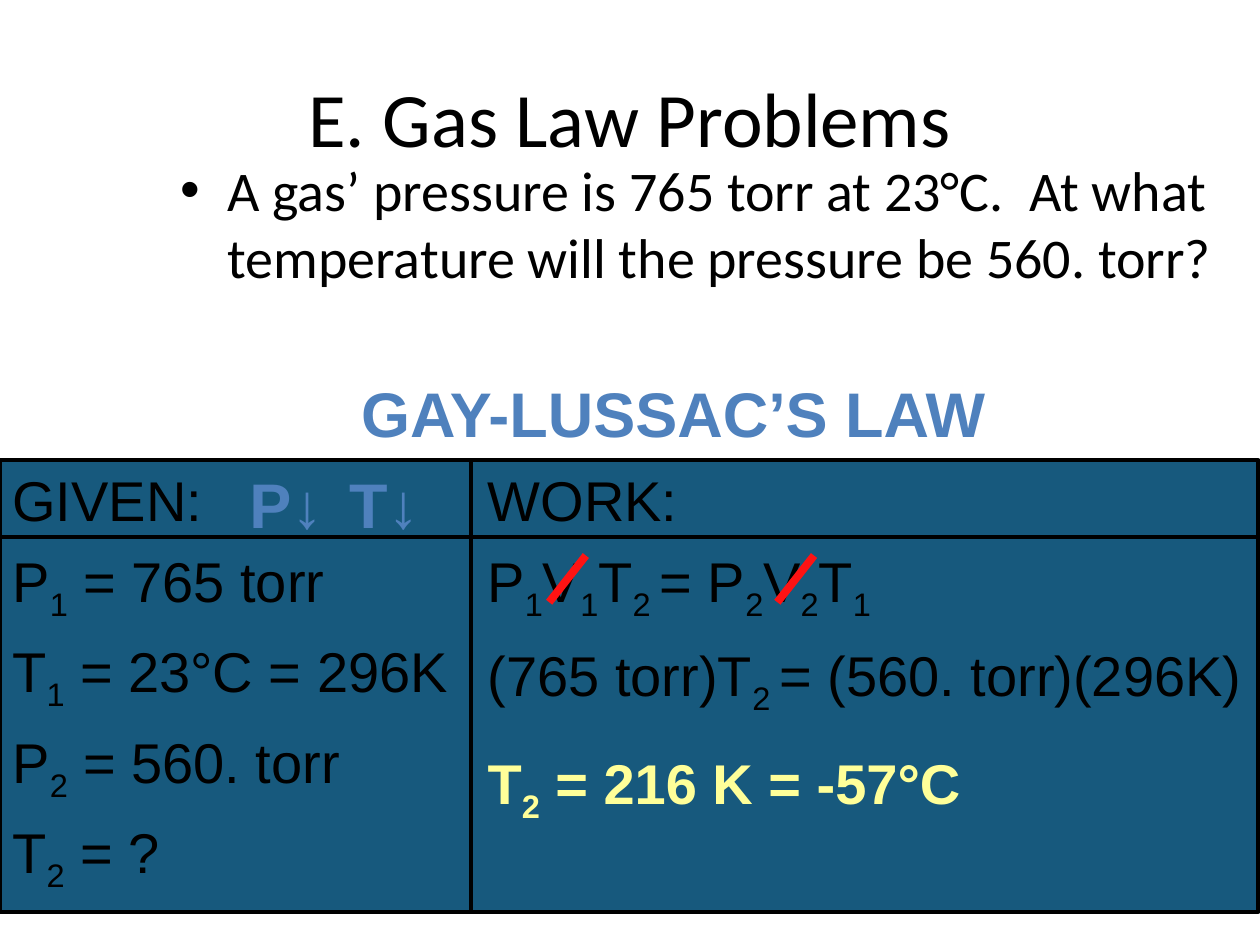
from lxml.etree import SubElement
from pptx import Presentation
from pptx.dml.color import RGBColor
from pptx.enum.shapes import MSO_CONNECTOR as Link, MSO_SHAPE as Shape
from pptx.enum.text import MSO_ANCHOR as Anchor, MSO_AUTO_SIZE as Fit, PP_ALIGN as Align
from pptx.oxml.ns import qn
from pptx.util import Cm, Pt

BLACK = RGBColor(0x00, 0x00, 0x00)
TEAL = RGBColor(0x17, 0x59, 0x7D)
BLUE = RGBColor(0x4F, 0x81, 0xBD)
RED = RGBColor(0xFF, 0x13, 0x13)
CREAM = RGBColor(0xFF, 0xFF, 0x99)


def style(para, face, size, color, bold=False):
    """Set the font of a whole paragraph."""
    font = para.font
    font.name, font.size, font.bold = face, Pt(size), bold
    font.color.rgb = color


def write(slide, box, rows, size=32, color=BLACK, bold=False, gap=8, align=Align.LEFT):
    """Add a text box; every second part between bars is a subscript."""
    frame = slide.shapes.add_textbox(*map(Cm, box)).text_frame
    frame.word_wrap = True
    for i, row in enumerate(rows):
        para = frame.add_paragraph() if i else frame.paragraphs[0]
        para.alignment = align
        para.space_before = Pt(gap if i else 2.5)
        style(para, "Arial", size, color, bold)
        for j, part in enumerate(row.split("|")):
            run = para.add_run()
            run.text = part
            if j % 2:
                run._r.get_or_add_rPr().set("baseline", "-25000")
    return frame


def rule(slide, start, end, color, width):
    """Draw a straight line without a shadow."""
    line = slide.shapes.add_connector(Link.STRAIGHT, *map(Cm, start + end))
    line.line.color.rgb = color
    line.line.width = Pt(width)
    SubElement(line.element.spPr, qn("a:effectLst"))


def fill(holder, box, text, size):
    """Place a placeholder and set its single paragraph."""
    holder.left, holder.top, holder.width, holder.height = map(Cm, box)
    frame = holder.text_frame
    frame.text = text
    frame.auto_size = Fit.NONE
    style(frame.paragraphs[0], "Calibri", size, BLACK)
    return frame


def header(slide, box):
    """Place the title, the question and the name of the law."""
    x, y, w, h = box
    title = fill(slide.shapes.title, (x, y, w, 3.18), "E. Gas Law Problems", 44)
    title.vertical_anchor = Anchor.MIDDLE
    ask = fill(
        slide.placeholders[1],
        (x + 2.11, y + 2.24, w - 1.27, 6.1),
        "A gas’ pressure is 765 torr at 23°C.  At what "
        "temperature will the pressure be 560. torr?",
        32,
    )
    ask.paragraphs[0].space_before = Pt(1)
    write(slide, (x + 5.18, y + h - 1.63, 14.25, 1.63), ["GAY-LUSSAC’S LAW"],
          36, BLUE, True, align=Align.CENTER)


def given(slide, box):
    """Write the known values and the trend arrows."""
    x, y, w, h = box
    write(slide, (x, y, w + 1, h), [
        "GIVEN:",
        "P|1| = 765 torr",
        "T|1| = 23°C = 296K",
        "P|2| = 560. torr",
        "T|2| = ?",
    ])
    for dx, wide, sign, align in ((4.78, 2.29, "P↓", Align.LEFT),
                                  (6.55, 2.39, "T↓", Align.CENTER)):
        write(slide, (x + dx, y, wide, 1.63), [sign], 36, BLUE, True, align=align)


def work(slide, box):
    """Write the solution and strike out the volumes."""
    x, y, w, h = box
    write(slide, (x, y, w, 3.63), ["WORK:", "P|1|V|1|T|2 |= P|2|V|2|T|1"])
    for dx in (1.49, 6.09):
        rule(slide, (x + dx, y + 2.89), (x + dx + 0.74, y + 1.95), RED, 4.5)
    frame = write(slide, (x, y + 3.53, w, 3.99),
                  ["(765 torr)T|2 |= (560. torr)(296K)", "T|2| = 216 K = -57°C"], gap=18.4)
    style(frame.paragraphs[1], "Arial", 32, CREAM, True)


def panel(slide, box):
    """Draw the two-column panel and its contents."""
    x, y, w, h = box
    split, head = x + 9.5, y + 1.55
    back = slide.shapes.add_shape(Shape.RECTANGLE, *map(Cm, box))
    back.shadow.inherit = False
    back.fill.solid()
    back.fill.fore_color.rgb = TEAL
    back.line.color.rgb = BLACK
    back.line.width = Pt(2.25)
    rule(slide, (split, y), (split, y + h), BLACK, 2.25)
    rule(slide, (x, head), (x + 25.4, head), BLACK, 2.25)
    given(slide, (x, y - 0.02, 9.5, 9.8))
    work(slide, (split + 0.08, y - 0.02, 15.82, h))


def main():
    """Build and save the slide."""
    deck = Presentation()
    deck.slide_width, deck.slide_height = Cm(25.4), Cm(19.05)
    slide = deck.slides.add_slide(deck.slide_layouts[1])
    header(slide, (1.27, 0.76, 22.86, 8.29))
    panel(slide, (0, 9.27, 25.37, 9.12))
    deck.save("out.pptx")


if __name__ == "__main__":
    main()
